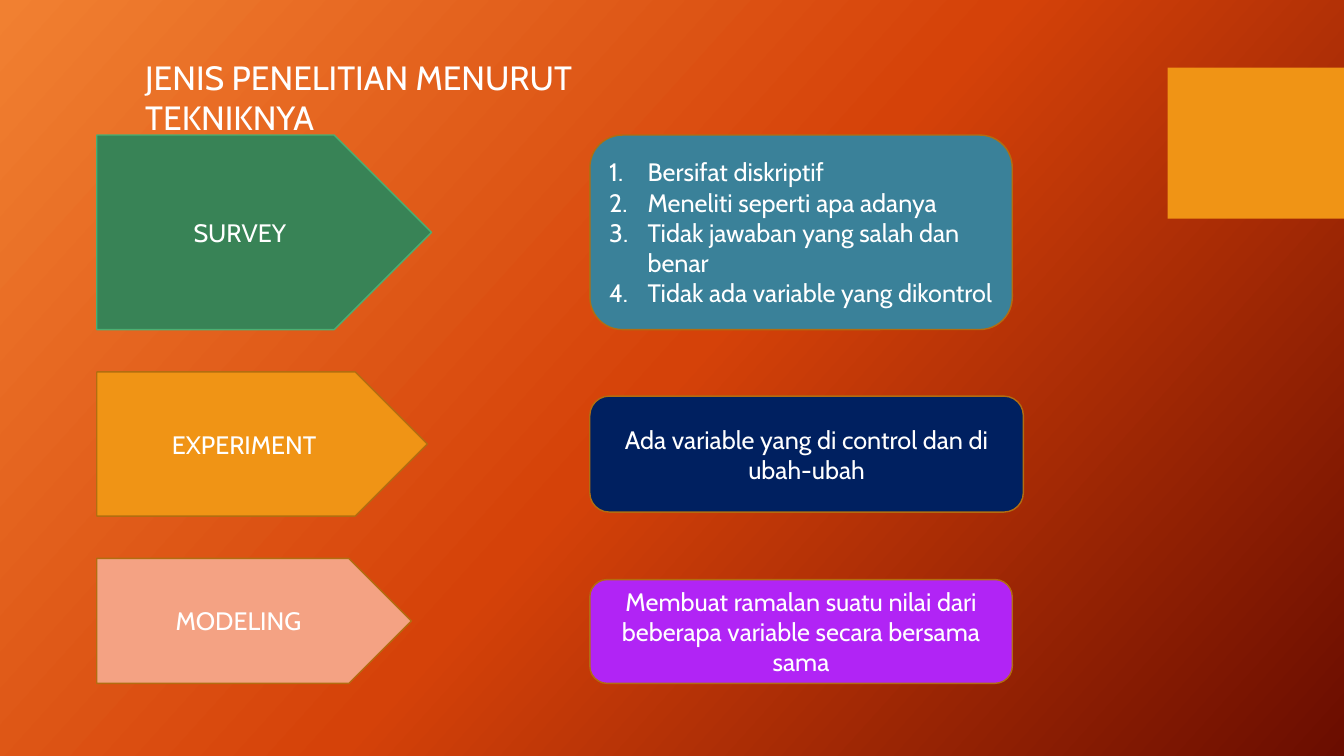
"""Build the slide on research types by technique."""
from copy import deepcopy

from pptx import Presentation
from pptx.dml.color import RGBColor
from pptx.enum.shapes import MSO_SHAPE as Shape
from pptx.enum.text import MSO_ANCHOR as Anchor, MSO_AUTO_SIZE as Fit, PP_ALIGN as Align
from pptx.oxml.ns import qn
from pptx.util import Inches, Pt


def paint(color, code):
    color.rgb = RGBColor.from_string(code)


def write(para, text, size, align):
    para.alignment = align
    run = para.add_run()
    run.text = text
    run.font.name = "Cabin"
    run.font.size = Pt(size)
    paint(run.font.color, "FFFFFF")


deck = Presentation()
deck.slide_width, deck.slide_height = Inches(13.33), Inches(7.5)
slide = deck.slides.add_slide(deck.slide_layouts[5])

back = slide.background.fill
back.gradient()
back.gradient_angle = 318
stops = slide.element.find(".//" + qn("a:gsLst"))
stops.insert(1, deepcopy(stops[0]))
for stop, place, code in zip(back.gradient_stops, (0, 0.5, 1), ("F18031", "D54209", "6A0D00")):
    stop.position = place
    paint(stop.color, code)

title = slide.shapes.title
title.left, title.top, title.width, title.height = map(Inches, (1.34, 0.51, 6.0, 0.5))
frame = title.text_frame
frame.word_wrap = True
frame.auto_size = Fit.NONE
frame.vertical_anchor = Anchor.TOP
write(frame.paragraphs[0], "JENIS PENELITIAN MENURUT TEKNIKNYA", 24, Align.LEFT)

plate, card = Shape.PENTAGON, Shape.ROUNDED_RECTANGLE
gold, edge = "F09415", "B26D10"
traits = [
    "Bersifat diskriptif",
    "Meneliti seperti apa adanya",
    "Tidak jawaban yang salah dan benar",
    "Tidak ada variable yang dikontrol",
]
control = ["Ada variable yang di control dan di ubah-ubah"]
model = ["Membuat ramalan suatu nilai dari beberapa variable secara bersama sama"]
items = [
    (Shape.RECTANGLE, 11.58, 0.67, 1.75, 1.5, gold, None, []),
    (plate, 0.96, 1.34, 3.32, 1.93, "388356", "4BAF73", ["SURVEY"]),
    (plate, 0.96, 3.69, 3.28, 1.43, gold, edge, ["EXPERIMENT"]),
    (plate, 0.96, 5.54, 3.12, 1.24, "F4A283", edge, ["MODELING"]),
    (card, 5.85, 1.34, 4.19, 1.93, "3A8199", edge, traits),
    (card, 5.85, 3.93, 4.3, 1.15, "002060", edge, control),
    (card, 5.85, 5.75, 4.19, 1.03, "B124F5", edge, model),
]
for kind, left, top, width, height, fill, line, texts in items:
    box = slide.shapes.add_shape(kind, *map(Inches, (left, top, width, height)))
    box.shadow.inherit = False
    box.fill.solid()
    paint(box.fill.fore_color, fill)
    if line:
        paint(box.line.color, line)
        box.line.width = Pt(1)
    else:
        box.line.fill.background()
    frame = box.text_frame
    frame.word_wrap = True
    frame.vertical_anchor = Anchor.MIDDLE
    listed = len(texts) > 1
    for count, text in enumerate(texts):
        para = frame.add_paragraph() if count else frame.paragraphs[0]
        if listed:
            props = para._p.get_or_add_pPr()
            props.set("marL", str(Inches(0.38)))
            props.set("indent", str(Inches(-0.38)))
            mark = props.makeelement(qn("a:buAutoNum"), {"type": "arabicPeriod"})
            props.append(mark)
        write(para, text, 18, Align.LEFT if listed else Align.CENTER)

deck.save("out.pptx")
